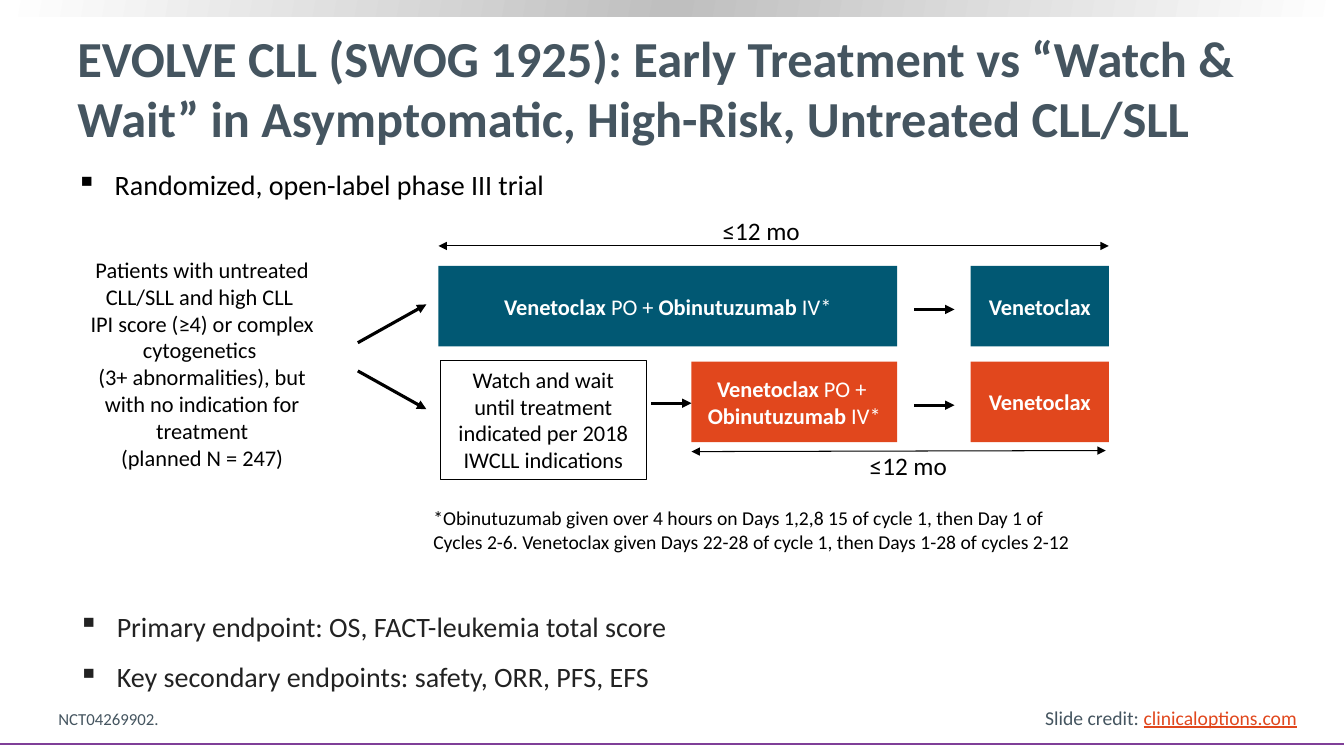
from copy import deepcopy

from lxml import etree
from pptx import Presentation
from pptx import util as u
from pptx.dml.color import RGBColor
from pptx.enum import shapes, text
from pptx.oxml.ns import qn

BLACK, WHITE, GREY, SLATE = "000000", "FFFFFF", "BFBFBF", "455560"
TEAL, ORANGE, PURPLE, CHARCOAL = "015873", "E1471D", "7F3F98", "222222"
CENTER = text.PP_ALIGN.CENTER
MIDDLE, TOP = text.MSO_ANCHOR.MIDDLE, text.MSO_ANCHOR.TOP
BOLD, PLAIN = {"bold": True}, {"bold": False}


def rgb(value):
    return RGBColor.from_string(value)


class Deck:
    """Places styled elements on a grid of 40 columns by 30 rows."""

    font = "Calibri"
    cols, rows = 40, 30

    def __init__(self):
        self.prs = Presentation()
        self.prs.slide_width = u.Inches(13.33)
        self.prs.slide_height = u.Inches(7.5)
        self.s = self.prs.slides.add_slide(self.prs.slide_layouts[6])

    def x(self, col):
        return round(self.prs.slide_width * col / self.cols)

    def y(self, row):
        return round(self.prs.slide_height * row / self.rows)

    def area(self, col, row, width, height):
        return self.x(col), self.y(row), self.x(width), self.y(height)

    def fill_text(self, sp, paras, size=16, color=BLACK, anchor=TOP, wrap=True,
                  bullet=False, **spacing):
        """Each paragraph is a string or a list of (text, format) runs."""
        tf = sp.text_frame
        tf.word_wrap, tf.vertical_anchor = wrap, anchor
        for i, runs in enumerate(paras):
            p = tf.paragraphs[0] if i == 0 else tf.add_paragraph()
            if bullet:
                pPr = p._p.get_or_add_pPr()
                pPr.set("marL", str(u.Inches(0.38)))
                pPr.set("indent", str(-u.Inches(0.38)))
                etree.SubElement(pPr, qn("a:buChar")).set("char", "▪")
            for name, value in spacing.items():
                setattr(p, name, value)
            for words, extra in [(runs, {})] if isinstance(runs, str) else runs:
                self.add_words(p, words, {"size": u.Pt(size), "color": color, **extra})

    def add_words(self, p, words, style):
        for i, line in enumerate(words.split("\n")):
            if i:
                p.add_line_break()
            if not line:
                continue
            r = p.add_run()
            r.text = line
            for name, value in {"name": self.font, **style}.items():
                if name == "color":
                    r.font.color.rgb = rgb(value)
                else:
                    setattr(r.font, name, value)

    def label(self, place, paras, **style):
        self.fill_text(self.s.shapes.add_textbox(*self.area(*place)), paras, **style)

    def box(self, place, paras=(), fill=None, line=None, **style):
        sp = self.s.shapes.add_shape(shapes.MSO_SHAPE.RECTANGLE, *self.area(*place))
        sp.shadow.inherit = False
        if fill:
            sp.fill.solid()
            sp.fill.fore_color.rgb = rgb(fill)
        else:
            sp.fill.background()
        if line:
            sp.line.color.rgb = rgb(line)
            sp.line.width = u.Pt(0.75)
        else:
            sp.line.fill.background()
        self.fill_text(sp, paras, alignment=CENTER, **style)
        return sp

    def band(self, place, colors, angle):
        sp = self.box(place)
        sp.fill.gradient()
        sp.fill.gradient_angle = angle
        stops = sp._element.spPr.find(qn("a:gradFill")).find(qn("a:gsLst"))
        while len(stops) < len(colors):
            stops.append(deepcopy(stops[0]))
        for i, (stop, color) in enumerate(zip(sp.fill.gradient_stops, colors)):
            stop.color.rgb = rgb(color)
            stop.position = i / (len(colors) - 1)

    def line(self, start, end, color=BLACK, width=2.25, ends=("tailEnd",)):
        (x1, y1), (x2, y2) = start, end
        c = self.s.shapes.add_connector(shapes.MSO_CONNECTOR.STRAIGHT, self.x(x1),
                                        self.y(y1), self.x(x2), self.y(y2))
        c.line.color.rgb = rgb(color)
        c.line.width = u.Pt(width)
        ln = c._element.spPr.find(qn("a:ln"))
        for tag in ends:
            etree.SubElement(ln, qn("a:" + tag)).set("type", "triangle")
        etree.SubElement(c._element.spPr, qn("a:effectLst"))

    def span(self, start, end):
        self.line(start, end, width=0.75, ends=("headEnd", "tailEnd"))


def main():
    d = Deck()

    # Frame and footer
    d.band((0, 0, 40, 0.64), (WHITE, GREY, WHITE), 170)
    d.line((0, 29.52), (40, 29.52), PURPLE, 1.5, ends=())
    d.label((30.81, 27.8, 8.16, 1.36),
            [[("Slide credit: ", {}),
              ("clinicaloptions.com", {"color": ORANGE, "underline": True})]],
            size=14, color=SLATE, wrap=False)
    d.label((1.44, 27.92, 22.32, 1.2), ["NCT04269902."], size=12, color=SLATE)

    # Title and bullets
    d.label((2.01, 1.04, 35.67, 4.84),
            [[("EVOLVE CLL (SWOG 1925): Early Treatment vs “Watch & Wait” in "
               "Asymptomatic, High-Risk, Untreated CLL/SLL", BOLD)]],
            size=36, color=SLATE, anchor=MIDDLE)
    d.label((1.98, 6.6, 35.7, 1.8), ["Randomized, open-label phase III trial"],
            size=20, bullet=True, line_spacing=0.9)
    d.label((2.04, 23.32, 32.4, 4.24),
            ["Primary endpoint: OS, FACT-leukemia total score",
             "Key secondary endpoints: safety, ORR, PFS, EFS"],
            size=20, color=CHARCOAL, bullet=True, line_spacing=1.5)

    # Patients and randomization arrows
    d.label((1.98, 9.96, 8.07, 9.04),
            ["Patients with untreated CLL/SLL and high CLL \n"
             "IPI score (≥4) or complex cytogenetics \n"
             "(3+ abnormalities), but with no indication for treatment",
             "(planned N = 247)"], alignment=CENTER)
    d.line((10.65, 13.6), (12.69, 12.08))
    d.line((10.65, 14.72), (12.69, 16.24))

    # Treatment arms: combination, then venetoclax alone
    arms = [(10.55, 13.05, 13.65, TEAL, "PO + "),
            (14.35, 20.58, 6.12, ORANGE, "PO + \n")]
    for row, col, width, color, joint in arms:
        style = dict(fill=color, color=WHITE, anchor=MIDDLE, wrap=False)
        d.box((col, row, width, 3.2),
              [[("Venetoclax ", BOLD), (joint, PLAIN),
                ("Obinutuzumab ", BOLD), ("IV*", PLAIN)]], **style)
        d.line((27.21, row + 1.73), (28.41, row + 1.73))
        d.box((28.89, row, 4.11, 3.2), [[("Venetoclax", BOLD)]], **style)

    # Watch and wait
    d.box((13.11, 14.32, 6.12, 4.72),
          ["Watch and wait until treatment indicated per 2018 IWCLL indications"],
          line=BLACK)
    d.line((19.38, 16), (20.58, 16))

    # Durations
    d.span((13.05, 9.76), (33, 9.76))
    d.span((20.58, 17.92), (32.91, 17.88))
    for col, row in [(21.21, 8.36), (25.59, 17.68)]:
        d.label((col, row, 6.5, 1.6), ["≤12 mo"], size=18)

    # Dosing footnote
    d.label((12.6, 19.88, 20.25, 2.28),
            ["*Obinutuzumab given over 4 hours on Days 1,2,8 15 of cycle 1, then Day 1 "
             "of Cycles 2-6. Venetoclax given Days 22-28 of cycle 1, then Days 1-28 of "
             "cycles 2-12"], size=14)

    d.prs.save("out.pptx")


if __name__ == "__main__":
    main()
